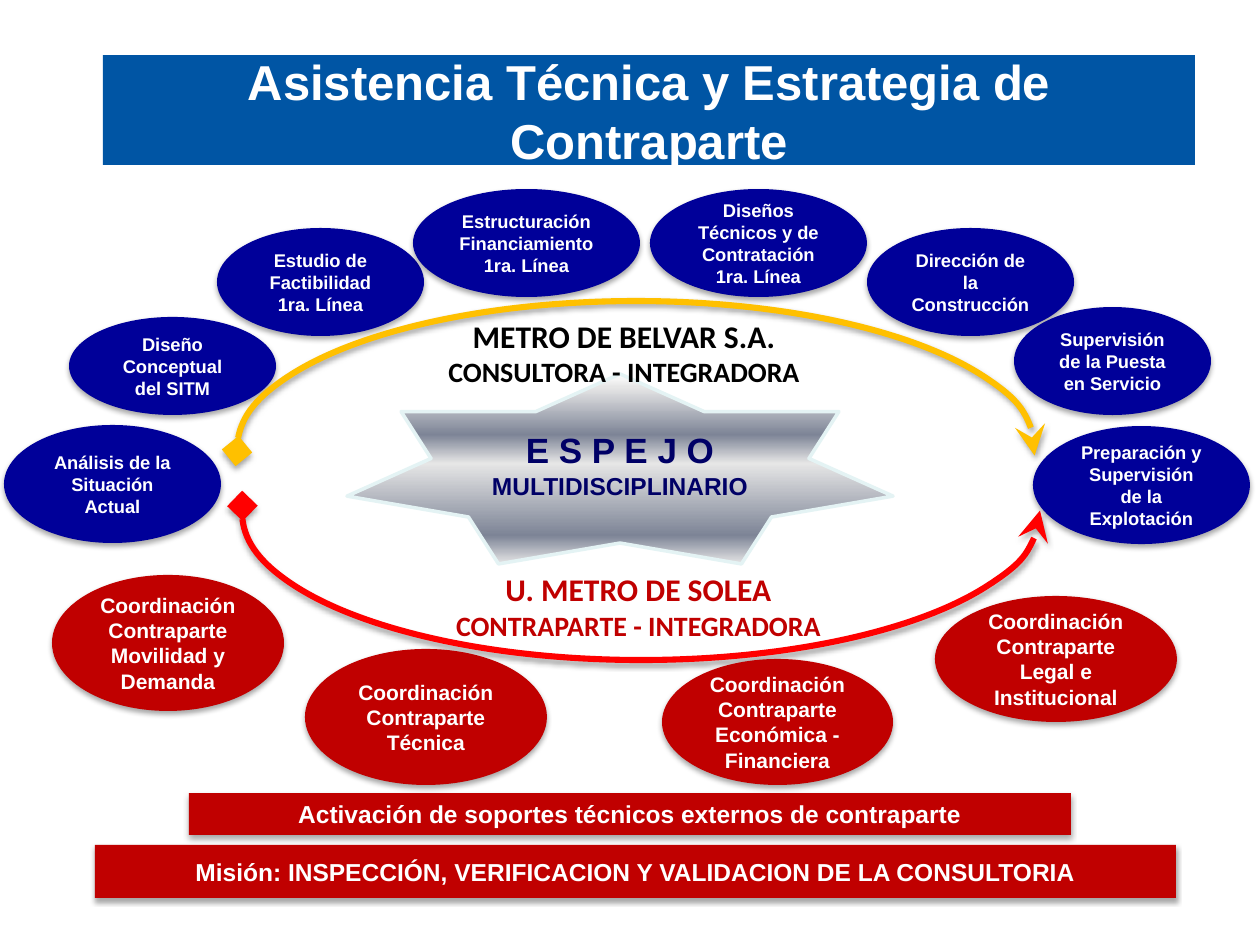
from lxml import etree
from pptx import Presentation
from pptx.dml.color import RGBColor
from pptx.enum.shapes import MSO_SHAPE
from pptx.enum.text import MSO_ANCHOR, MSO_AUTO_SIZE, PP_ALIGN
from pptx.oxml.ns import qn
from pptx.util import Emu, Pt

EMU_PER_PX = 914400 / 126

NAVY = RGBColor(0x00, 0x00, 0x99)
DARK_NAVY = RGBColor(0x00, 0x00, 0x66)
CRIMSON = RGBColor(0xC0, 0x00, 0x00)
RED = RGBColor(0xFF, 0x00, 0x00)
AMBER = RGBColor(0xFF, 0xC0, 0x00)
TITLE_BLUE = RGBColor(0x00, 0x55, 0xA4)
PALE_CYAN = RGBColor(0xE4, 0xF3, 0xF4)
WHITE = RGBColor(0xFF, 0xFF, 0xFF)
BLACK = RGBColor(0x00, 0x00, 0x00)

STEEL_STOPS = [(0, "FFFFFF"), (7, "E6E6E6"), (32, "7D8496"),
               (47, "E6E6E6"), (85, "7D8496"), (100, "E6E6E6")]

CONSULTANT_TASKS = [
    ("Diseño Conceptual del SITM", (69, 317, 207, 98)),
    ("Análisis de la Situación Actual", (4, 425, 217, 118)),
    ("Estudio de Factibilidad 1ra. Línea", (217, 228, 207, 108)),
    ("Estructuración Financiamiento 1ra. Línea", (413, 189, 227, 108)),
    ("Diseños Técnicos y de Contratación 1ra. Línea", (650, 189, 217, 108)),
    ("Dirección de la Construcción", (867, 228, 207, 108)),
    ("Supervisión de la Puesta en Servicio", (1014, 307, 197, 108)),
    ("Preparación y Supervisión de la Explotación", (1033, 426, 217, 118)),
]
COUNTERPART_TEAMS = [
    ("Coordinación Contraparte Técnica", (305, 649, 242, 136)),
    ("Coordinación Contraparte Económica - Financiera", (662, 659, 231, 126)),
    ("Coordinación Contraparte Movilidad y Demanda", (52, 575, 232, 136)),
    ("Coordinación Contraparte Legal e Institucional", (935, 596, 242, 126)),
]
BANNERS = [
    ("Activación de soportes técnicos externos de contraparte", (189, 793, 882, 42)),
    ("Misión: INSPECCIÓN, VERIFICACION Y VALIDACION DE LA CONSULTORIA",
     (95, 845, 1081, 53)),
]


def px(n):
    return Emu(round(n * EMU_PER_PX))


def add_child(parent, tag, **attrs):
    return etree.SubElement(parent, qn(tag), {k: str(v) for k, v in attrs.items()})


def add_soft_shadow(shape):
    effects = shape._element.spPr.find(qn("a:effectLst"))
    shadow = add_child(effects, "a:outerShdw", blurRad=40000, dist=23000,
                       dir=5400000, rotWithShape=0)
    color = add_child(shadow, "a:srgbClr", val="000000")
    add_child(color, "a:alpha", val=35000)


def write_lines(tf, lines, color, font="Arial"):
    """Fill a text frame with centred bold (text, size) lines."""
    tf.text = "\n".join(text for text, _ in lines)
    for p, (_, size) in zip(tf.paragraphs, lines):
        p.alignment = PP_ALIGN.CENTER
        for r in p.runs:
            r.font.name = font
            r.font.size = Pt(size)
            r.font.bold = True
            r.font.color.rgb = color


def add_block(s, kind, box, fill, text, size, shadow=True):
    shape = s.shapes.add_shape(kind, *map(px, box))
    shape.shadow.inherit = False
    shape.fill.solid()
    shape.fill.fore_color.rgb = fill
    shape.line.fill.background()
    if shadow:
        add_soft_shadow(shape)
    tf = shape.text_frame
    tf.word_wrap = True
    tf.vertical_anchor = MSO_ANCHOR.MIDDLE
    write_lines(tf, [(text, size)], WHITE)


def add_arc(s, box, color, head, tail, rotation=0):
    arc = s.shapes.add_shape(MSO_SHAPE.ARC, *map(px, box))
    arc.adjustments[0] = 107.83
    arc.adjustments[1] = 0.57
    arc.rotation = rotation
    arc.shadow.inherit = False
    arc.fill.background()
    arc.line.color.rgb = color
    arc.line.width = Pt(3.5)
    ln = arc._element.spPr.find(qn("a:ln"))
    add_child(ln, "a:headEnd", type=head, w="lg", len="lg")
    add_child(ln, "a:tailEnd", type=tail, w="lg", len="lg")
    add_soft_shadow(arc)


def add_label(s, box, name, role, color):
    tf = s.shapes.add_textbox(*map(px, box)).text_frame
    tf.word_wrap = False
    tf.auto_size = MSO_AUTO_SIZE.SHAPE_TO_FIT_TEXT
    write_lines(tf, [(name, 18), (role, 16)], color, "Calibri")


def add_mirror_star(s, box):
    star = s.shapes.add_shape(MSO_SHAPE.STAR_7_POINT, *map(px, box))
    star.shadow.inherit = False
    star.line.color.rgb = PALE_CYAN
    star.line.width = Pt(2)
    star.fill.gradient()
    star.fill.gradient_angle = 270
    stops = star._element.spPr.find(qn("a:gradFill")).find(qn("a:gsLst"))
    for stop in list(stops):
        stops.remove(stop)
    for percent, color in STEEL_STOPS:
        stop = add_child(stops, "a:gs", pos=percent * 1000)
        add_child(stop, "a:srgbClr", val=color)
    tf = star.text_frame
    tf.word_wrap = True
    tf.vertical_anchor = MSO_ANCHOR.MIDDLE
    write_lines(tf, [("E S P E J O", 20), ("MULTIDISCIPLINARIO", 14)], DARK_NAVY)


def main():
    prs = Presentation()
    prs.slide_width, prs.slide_height = px(1260), px(945)
    s = prs.slides.add_slide(prs.slide_layouts[6])

    for text, box in CONSULTANT_TASKS:
        add_block(s, MSO_SHAPE.OVAL, box, NAVY, text, 10.5)

    add_arc(s, (242, 365, 798, 295), RED, "stealth", "diamond", rotation=180)
    add_label(s, (438, 564, 401, 84), "U. METRO DE SOLEA",
              "CONTRAPARTE - INTEGRADORA", CRIMSON)
    add_mirror_star(s, (347, 374, 546, 190))
    add_label(s, (433, 311, 382, 84), "METRO DE BELVAR S.A.",
              "CONSULTORA - INTEGRADORA", BLACK)
    add_arc(s, (237, 301, 798, 296), AMBER, "diamond", "stealth")

    for text, box in COUNTERPART_TEAMS:
        add_block(s, MSO_SHAPE.OVAL, box, CRIMSON, text, 12)
    for text, box in BANNERS:
        add_block(s, MSO_SHAPE.RECTANGLE, box, CRIMSON, text, 14)
    add_block(s, MSO_SHAPE.RECTANGLE, (103, 55, 1092, 110), TITLE_BLUE,
              "Asistencia Técnica y Estrategia de Contraparte", 28, shadow=False)

    prs.save("out.pptx")


if __name__ == "__main__":
    main()
